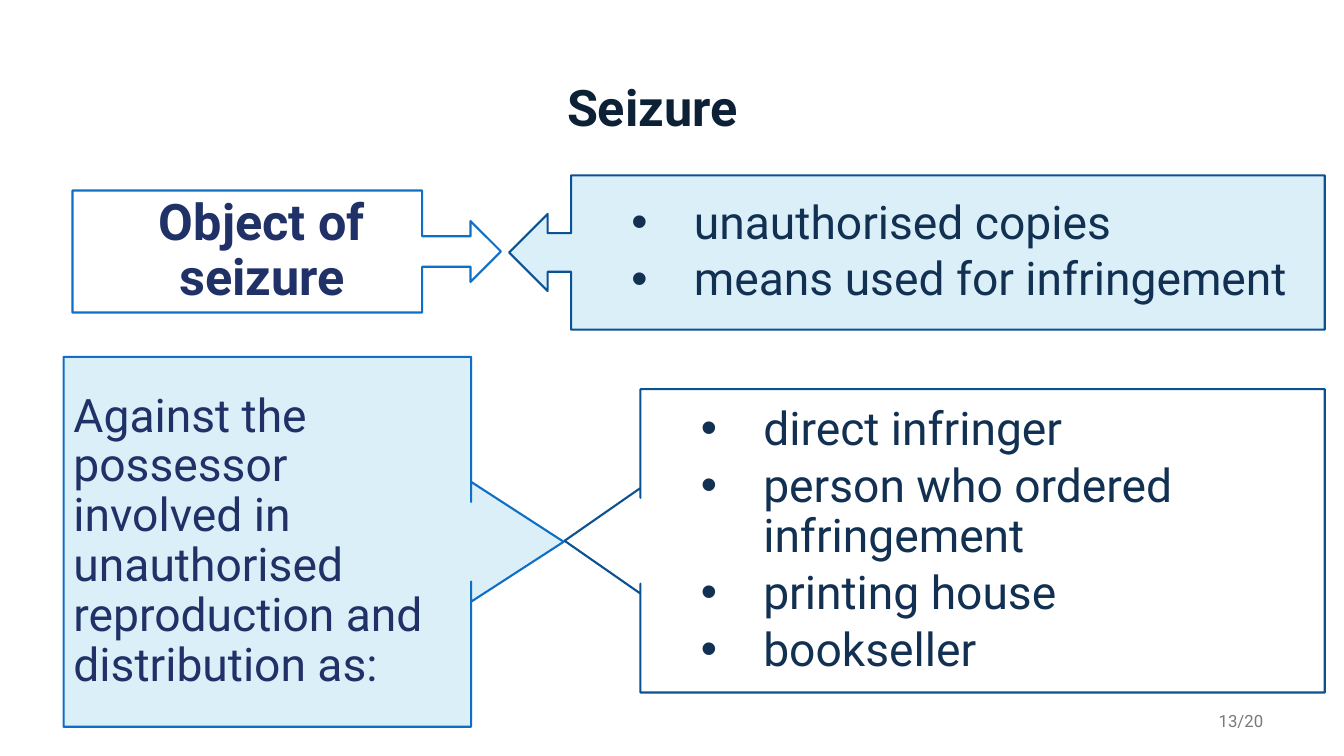
from lxml.etree import SubElement
from pptx import Presentation
from pptx.dml.color import RGBColor as Rgb
from pptx.enum.shapes import MSO_SHAPE as Shape
from pptx.enum.text import MSO_ANCHOR as Anchor, MSO_AUTO_SIZE as Auto, PP_ALIGN as Align
from pptx.oxml.ns import qn
from pptx.util import Inches, Pt

HUES = {
    "title": "0C2036", "label": "1F3167", "list": "113052", "page": "797979",
    "pale": "DBEFF9", "white": "FFFFFF", "blue": "0F6FC6", "navy": "0B5292",
}

deck = Presentation()
deck.slide_width, deck.slide_height = Inches(13.33), Inches(7.5)
slide = deck.slides.add_slide(deck.slide_layouts[5])


def area(x, y, w, h):
    """Turn percentages of the slide's size into left, top, width, height."""
    wide, high = deck.slide_width / 100, deck.slide_height / 100
    return int(x * wide), int(y * high), int(w * wide), int(h * high)


def write(frame, text, size, hue, bold=False, align=Align.LEFT,
          gap=0, left=0, hang=0, lead=0.9):
    """Fill a frame with one paragraph a line; a hang makes them bullets."""
    frame.word_wrap = True
    frame.auto_size = Auto.NONE
    frame.vertical_anchor = Anchor.MIDDLE
    frame.text = text
    for i, para in enumerate(frame.paragraphs):
        props = para._p.get_or_add_pPr()
        props.set("marL", str(Inches(left)))
        props.set("indent", str(-Inches(hang)))
        para.alignment = align
        para.line_spacing = lead
        para.space_before = Pt(gap if i else 0)
        if hang:
            SubElement(props, qn("a:buFont")).set("typeface", "Arial")
            SubElement(props, qn("a:buChar")).set("char", "•")
        font = para.font
        font.name, font.size, font.bold = "Roboto", Pt(size), bold
        font.color.rgb = Rgb.from_string(HUES[hue])


title = slide.shapes.title
title.left, title.top, title.width, title.height = area(3.83, 7.6, 89.42, 13.87)
write(title.text_frame, "Seizure", 36, "title", bold=True, align=Align.CENTER)

page = slide.shapes.add_textbox(*area(72.24, 92.67, 22.5, 5.33))
write(page.text_frame, "13/20", 12, "page", align=Align.RIGHT, lead=1)

label = dict(size=33, hue="label")
head = dict(size=36, hue="label", bold=True, align=Align.CENTER, left=0.29)
items = dict(size=33, hue="list", gap=5, left=1.12, hang=0.62)
right, left = Shape.RIGHT_ARROW_CALLOUT, Shape.LEFT_ARROW_CALLOUT

# kind, place, arrow proportions, fill, line, text, format
calls = [
    (right, (4.73, 47.2, 37.21, 48.93), (0.215, 0.162, 0.25, 0.816), "pale", "blue",
     "Against the possessor involved in unauthorised reproduction and distribution as:",
     label),
    (left, (37.88, 23.2, 60.69, 20.4), (0.25, 0.25, 0.25, 0.924), "pale", "navy",
     "unauthorised copies\nmeans used for infringement", items),
    (right, (5.4, 25.2, 31.88, 16.13), (0.25, 0.25, 0.25, 0.816), "white", "blue",
     "Object of seizure", head),
    (left, (42.01, 51.47, 56.56, 40.13), (0.283, 0.174, 0.25, 0.91), "white", "navy",
     "direct infringer\nperson who ordered infringement\nprinting house\nbookseller",
     items),
]
for kind, place, arrow, fill, line, text, form in calls:
    call = slide.shapes.add_shape(kind, *area(*place))
    for i, share in enumerate(arrow):
        call.adjustments[i] = share
    call.shadow.inherit = False
    call.fill.solid()
    call.fill.fore_color.rgb = Rgb.from_string(HUES[fill])
    call.line.color.rgb = Rgb.from_string(HUES[line])
    call.line.width = Pt(1.5)
    write(call.text_frame, text, **form)

deck.save("out.pptx")
